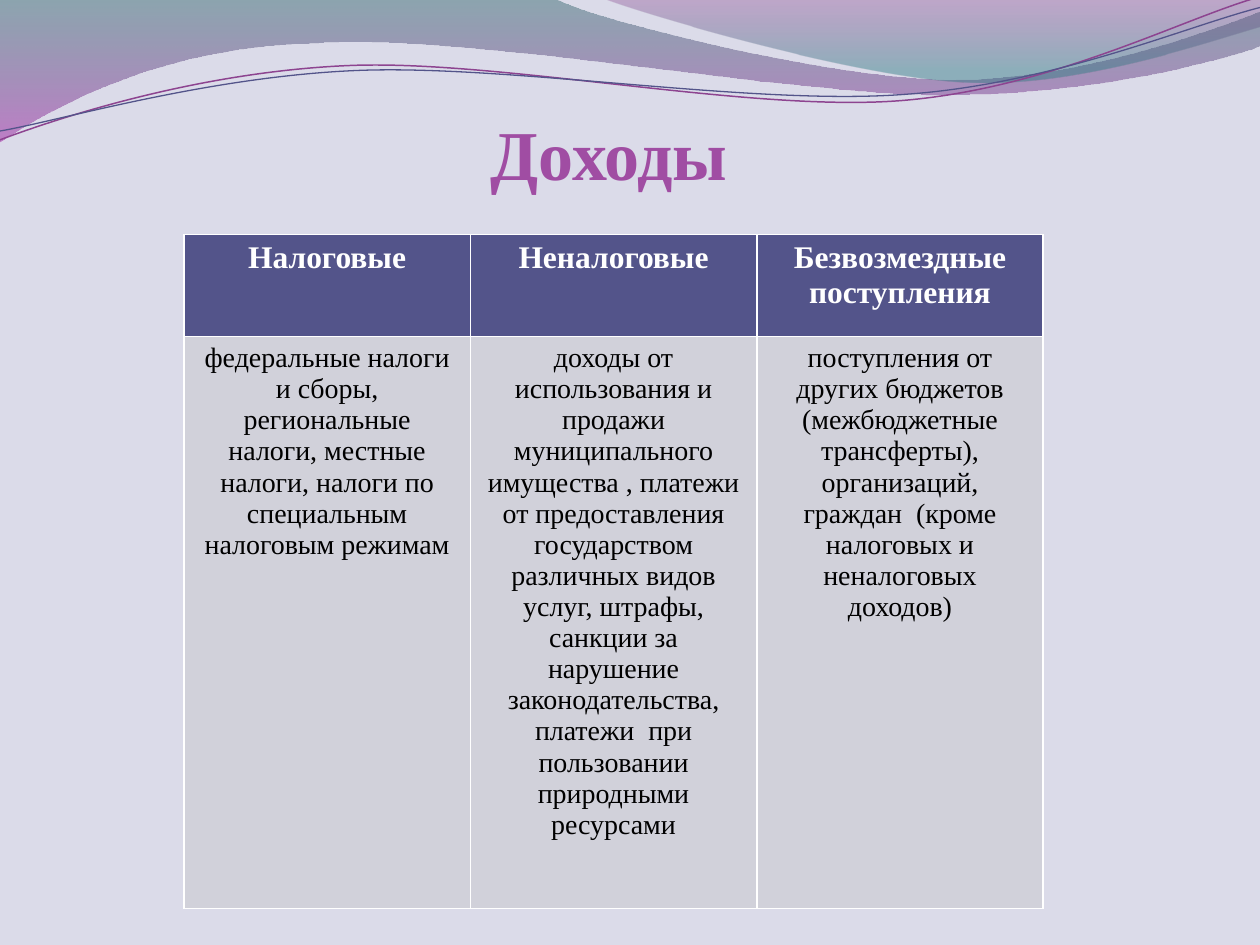
import math

from lxml import etree
from pptx import Presentation
from pptx import util as u
from pptx.dml.color import RGBColor
from pptx.enum import text
from pptx.oxml import ns

FONT = "Times New Roman"
TILT = 2.7
HUES = {
    "back": "DBDBE9", "title": "A04DA3", "head": "53548A", "body": "D1D1DA",
    "white": "FFFFFF", "black": "000000", "plum": "8D4490",
    "teal": "2D6368", "pink": "A530A9", "mauve": "7F2F82", "sea": "2F7B82",
}

BANDS = [
    ([(0, 0), (4.4, -0.01), (4.76, 0.17, 6.64, 0.63, 7.58, 0.63),
      (8.53, 0.63, 9.58, 0.26, 10, 0.09), (10.01, 0.36),
      (9.83, 0.44, 8.7, 0.76, 7.46, 0.75),
      (6.22, 0.75, 3.82, 0.28, 2.57, 0.34),
      (1.29, 0.36, 0.46, 0.83, -0.01, 1.13), (0, 0)],
     [(0, "teal", 45), (1, "pink", 55)]),
    ([(4.79, -0.01), (5.09, 0.11, 6.82, 0.62, 7.69, 0.65),
      (8.56, 0.69, 9.61, 0.32, 10, 0.21), (10, 0), (4.79, -0.01)],
     [(0, "mauve", 30), (0.8, "sea", 45)]),
]
WAVES = [
    ([(0, 1.11), (0.48, 0.93, 1.58, 0.57, 2.77, 0.52),
      (3.95, 0.47, 5.93, 0.89, 7.13, 0.8),
      (8.33, 0.71, 9.38, 0.15, 9.98, -0.02)], (4.99, 0.57), "plum", 0.85),
    ([(0, 1.04), (0.47, 0.96, 1.64, 0.61, 2.83, 0.56),
      (4.03, 0.51, 5.97, 0.84, 7.17, 0.75),
      (8.36, 0.67, 9.41, 0.21, 10, 0.06)], (5, 0.59), "head", 0.75),
]
ROWS = [
    ["Налоговые", "Неналоговые", "Безвозмездные поступления"],
    ["федеральные налоги и сборы, региональные налоги, местные налоги, "
     "налоги по специальным налоговым режимам",
     "доходы от использования и продажи муниципального имущества , платежи "
     "от предоставления государством различных видов услуг, штрафы, санкции "
     "за нарушение законодательства, платежи  при пользовании природными "
     "ресурсами",
     "поступления от других бюджетов (межбюджетные трансферты), организаций, "
     "граждан  (кроме налоговых и неналоговых доходов)"],
]


def hue(name):
    return RGBColor.from_string(HUES[name])


def pairs(part):
    return list(zip(part[::2], part[1::2]))


def turn(part, mid):
    cos, sin = math.cos(math.radians(TILT)), math.sin(math.radians(TILT))
    flat = []
    for x, y in pairs(part):
        dx, dy = x - mid[0], y - mid[1]
        flat += [mid[0] + dx * cos - dy * sin, mid[1] + dx * sin + dy * cos]
    return tuple(flat)


def add_path(slide, parts, close):
    dots = [(u.Inches(x), u.Inches(y)) for part in parts for x, y in pairs(part)]
    pen = slide.shapes.build_freeform(*dots[0])
    pen.add_line_segments(dots[1:], close=close)
    shape = pen.convert_to_shape()
    shape.shadow.inherit = False
    nodes = iter(list(shape.element.spPr.iter(ns.qn("a:lnTo"))))
    for part in parts[1:]:
        legs = [next(nodes) for pair in pairs(part)]
        if len(legs) == 3:
            curve = etree.Element(ns.qn("a:cubicBezTo"))
            legs[0].addprevious(curve)
            for leg in legs:
                curve.append(leg[0])
                leg.getparent().remove(leg)
    return shape


def add_band(slide, parts, stops):
    shape = add_path(slide, parts, True)
    shape.line.fill.background()
    shape.fill.gradient()
    shape.fill.gradient_angle = 270
    for stop, (place, name, alpha) in zip(shape.fill.gradient_stops, stops):
        stop.position = place
        stop.color.rgb = hue(name)
    tints = shape.element.spPr.iter(ns.qn("a:srgbClr"))
    for tint, (place, name, alpha) in zip(list(tints), stops):
        etree.SubElement(tint, ns.qn("a:alpha"), val=str(alpha * 1000))


def add_wave(slide, parts, mid, name, width):
    shape = add_path(slide, [turn(part, mid) for part in parts], False)
    shape.rotation = -TILT
    shape.fill.background()
    shape.line.color.rgb = hue(name)
    shape.line.width = u.Pt(width)


def write(frame, words, size, name, bold):
    par = frame.paragraphs[0]
    par.alignment = text.PP_ALIGN.CENTER
    run = par.add_run()
    run.text = words
    run.font.name = FONT
    run.font.size = u.Pt(size)
    run.font.bold = bold
    run.font.color.rgb = hue(name)


def set_title(slide, words):
    title = slide.shapes.title
    title.left, title.top = u.Inches(1.45), u.Inches(0.67)
    title.width, title.height = u.Inches(6.77), u.Inches(0.87)
    frame = title.text_frame
    frame.margin_left = frame.margin_right = 0
    frame.margin_top = frame.margin_bottom = 0
    frame.vertical_anchor = text.MSO_ANCHOR.BOTTOM
    write(frame, words, 40, "title", True)


def add_grid(slide):
    table = slide.shapes.add_table(
        2, 3, u.Inches(1.46), u.Inches(1.86), u.Inches(6.82), u.Inches(5.35)).table
    for col in table.columns:
        col.width = u.Inches(6.82 / 3)
    looks = [(0.81, 18, "white", True, "head"),
             (4.54, 16, "black", False, "body")]
    for row, texts, look in zip(table.rows, ROWS, looks):
        high, size, ink, bold, fill = look
        row.height = u.Inches(high)
        for cell, words in zip(row.cells, texts):
            cell.fill.solid()
            cell.fill.fore_color.rgb = hue(fill)
            write(cell.text_frame, words, size, ink, bold)


def main():
    deck = Presentation()
    deck.slide_width, deck.slide_height = u.Inches(10), u.Inches(7.5)
    slide = deck.slides.add_slide(deck.slide_layouts[5])
    slide.background.fill.solid()
    slide.background.fill.fore_color.rgb = hue("back")
    for band in BANDS:
        add_band(slide, *band)
    for wave in WAVES:
        add_wave(slide, *wave)
    set_title(slide, "Доходы")
    add_grid(slide)
    deck.save("out.pptx")


if __name__ == "__main__":
    main()
